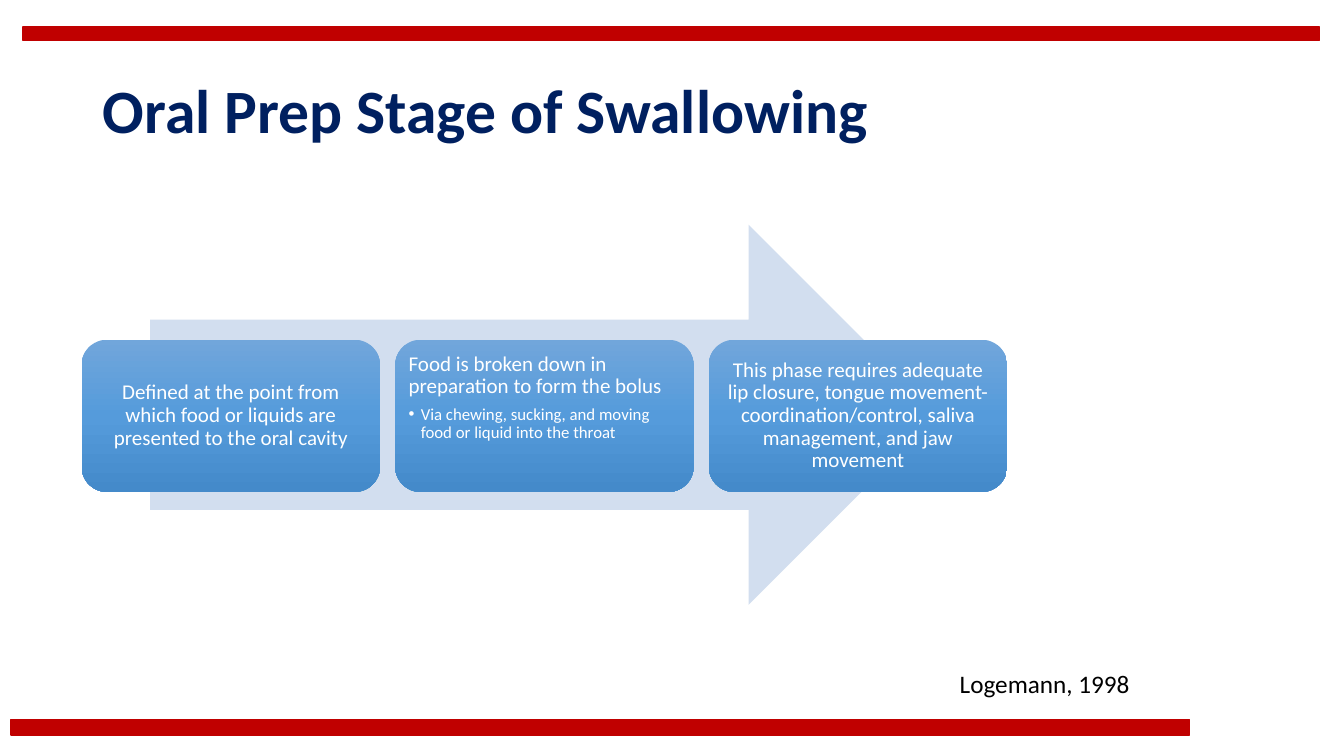
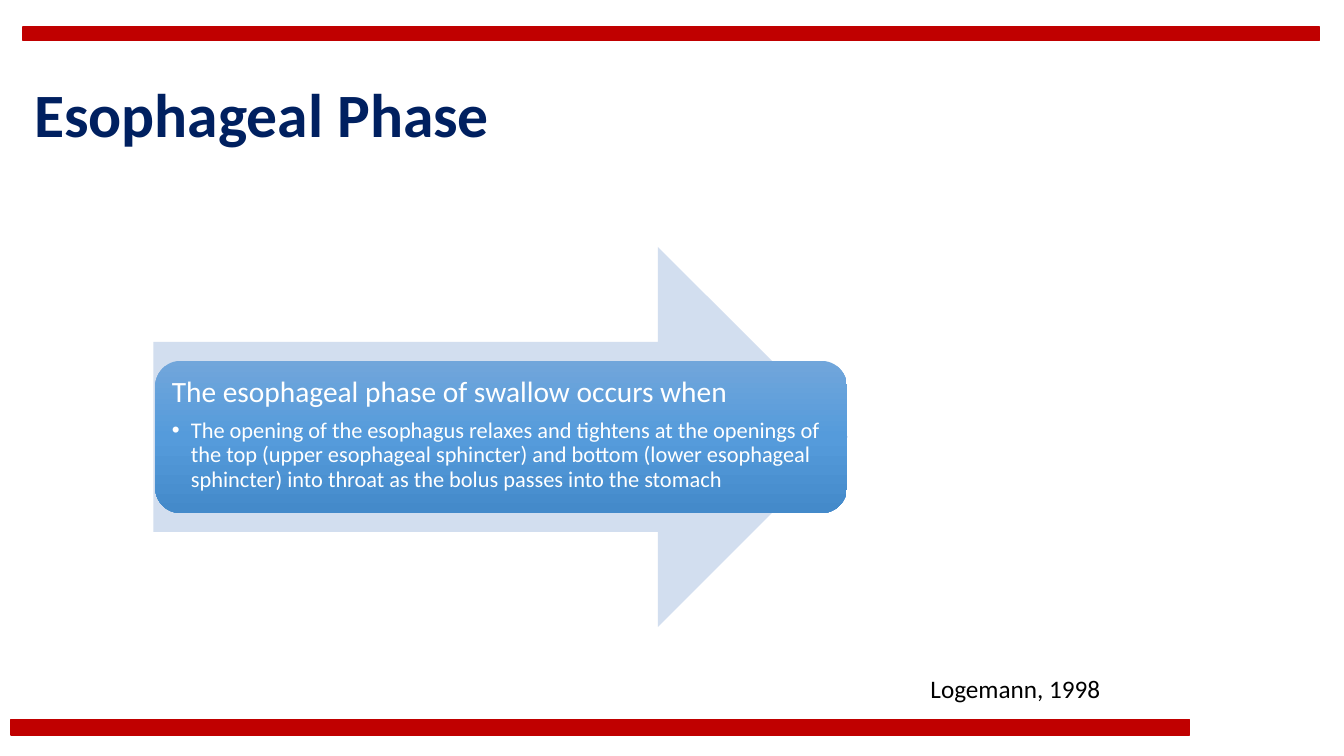
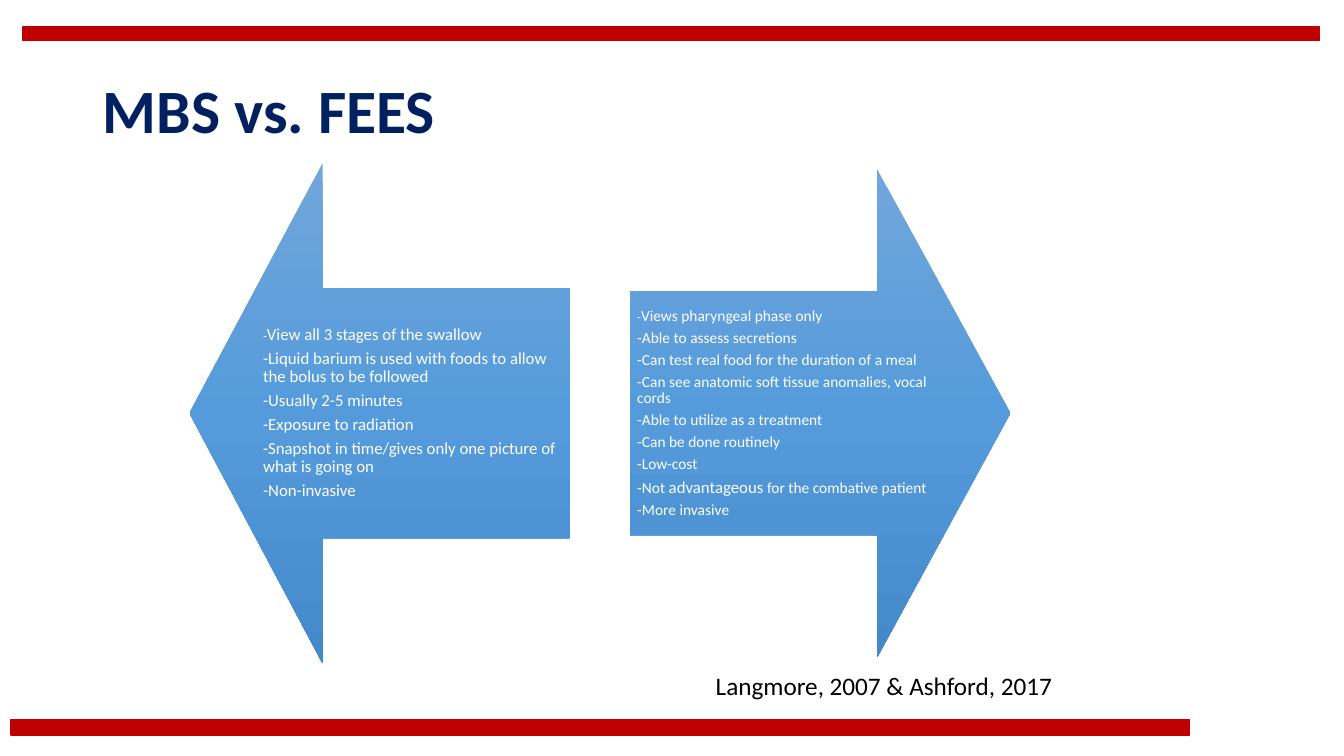
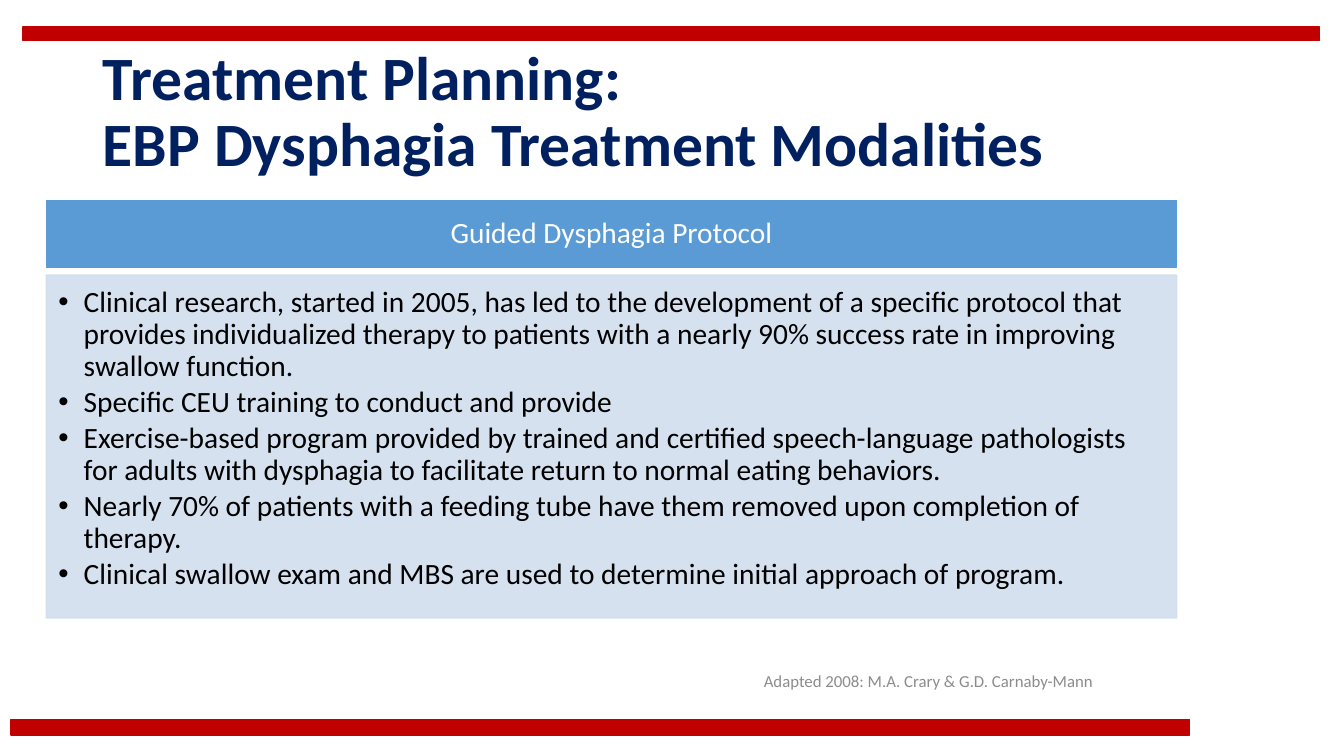
"""Build four slides on the stages, assessment and treatment of swallowing."""
from lxml.etree import SubElement
from pptx import Presentation
from pptx.dml.color import RGBColor
from pptx.enum.shapes import MSO_SHAPE
from pptx.enum.text import MSO_ANCHOR, MSO_AUTO_SIZE, PP_ALIGN
from pptx.oxml.ns import qn
from pptx.util import Inches, Pt

RED = RGBColor(0xC0, 0x00, 0x00)
NAVY = RGBColor(0x00, 0x20, 0x60)
BLUE = RGBColor(0x5B, 0x9B, 0xD5)
PALE = RGBColor(0xD2, 0xDE, 0xEF)
GREY = RGBColor(0x8C, 0x8C, 0x8C)
WHITE = RGBColor(0xFF, 0xFF, 0xFF)
BLACK = RGBColor(0x00, 0x00, 0x00)
GRADIENT = [(0, RGBColor(0x71, 0xA6, 0xDB)), (50, RGBColor(0x55, 0x9B, 0xDB)), (100, RGBColor(0x44, 0x8A, 0xCA))]
FONT = "Calibri"


def add_block(page, kind, place, fill=None, outlined=False):
    """Add a shape with a plain fill, or with the blue gradient when no fill is given."""
    block = page.shapes.add_shape(kind, *[Inches(length) for length in place])
    block.shadow.inherit = False
    if fill is None:
        block.fill.gradient()
        block.fill.gradient_angle = 270
        stops = block.element.spPr.find(".//" + qn("a:gsLst"))
        for stop in list(stops):
            stops.remove(stop)
        for percent, color in GRADIENT:
            stop = SubElement(stops, qn("a:gs"), pos=str(percent * 1000))
            SubElement(stop, qn("a:srgbClr"), val=str(color))
    else:
        block.fill.solid()
        block.fill.fore_color.rgb = fill
    if outlined:
        block.line.color.rgb = fill
        block.line.width = Pt(1)
    else:
        block.line.fill.background()
    return block


def write(box, items, color, align=PP_ALIGN.LEFT, anchor=MSO_ANCHOR.MIDDLE, insets=(0.1, 0.05, 0.1, 0.05), spacing=0.9):
    """Fill a box with (spans, size, bullet indent) items, where a span is text or (text, size)."""
    frame = box.text_frame
    frame.word_wrap = True
    frame.auto_size = MSO_AUTO_SIZE.NONE
    frame.vertical_anchor = anchor
    frame.margin_left, frame.margin_top, frame.margin_right, frame.margin_bottom = [Inches(inset) for inset in insets]
    for index, (spans, size, indent) in enumerate(items):
        para = frame.add_paragraph() if index else frame.paragraphs[0]
        para.alignment = align
        para.line_spacing = spacing
        para.space_after = Pt(round(size * (0.15 if indent else 0.35), 2)) if len(items) > 1 else Pt(0)
        if indent:
            properties = para._p.get_or_add_pPr()
            properties.set("marL", str(Inches(indent)))
            properties.set("indent", str(-Inches(indent)))
            SubElement(properties, qn("a:buFont"), typeface="Arial")
            SubElement(properties, qn("a:buChar"), char="•")
        para.font.name = FONT
        para.font.size = Pt(size)
        para.font.color.rgb = color
        if isinstance(spans, str):
            para.text = spans
            continue
        for text, span_size in spans:
            span = para.add_run()
            span.text = text
            span.font.size = Pt(span_size)


deck = Presentation()
deck.slide_width = Inches(13.33)
deck.slide_height = Inches(7.5)
layout = deck.slide_layouts[5]

headings = [
    ("Oral Prep Stage of Swallowing", 0.92, 0.4),
    ("Esophageal Phase", 0.24, 0.44),
    ("MBS vs. FEES", 0.92, 0.4),
    ("Treatment Planning:\vEBP Dysphagia Treatment Modalities", 0.92, 0.4),
]
pages = []
for heading, left, top in headings:
    page = deck.slides.add_slide(layout)
    title = page.shapes.title
    title.left, title.top = Inches(left), Inches(top)
    title.width, title.height = Inches(11.5), Inches(1.45)
    write(title, [(heading, 44, 0)], NAVY)
    title.text_frame.paragraphs[0].font.bold = True
    pages.append(page)
oral_page, esophageal_page, comparison_page, treatment_page = pages

for place in [(0.11, 7.14, 11.69, 0.15), (0.23, 0.27, 12.86, 0.13)]:
    band = add_block(oral_page, MSO_SHAPE.RECTANGLE, place, RED, outlined=True)
    layout.shapes.element.insert(2, band.element)

citations = [
    (oral_page, "Logemann, 1998", (9.42, 6.58, 2.41, 0.4), 18, BLACK, PP_ALIGN.LEFT),
    (esophageal_page, "Logemann, 1998", (9.13, 6.63, 2.41, 0.4), 18, BLACK, PP_ALIGN.LEFT),
    (comparison_page, "Langmore, 2007 & Ashford, 2017", (7, 6.6, 4.19, 0.4), 18, BLACK, PP_ALIGN.LEFT),
    (treatment_page, "Adapted 2008: M.A. Crary & G.D. Carnaby-Mann", (7.14, 6.55, 4.14, 0.4), 12, GREY, PP_ALIGN.CENTER),
]
for page, citation, place, size, color, align in citations:
    box = page.shapes.add_textbox(*[Inches(length) for length in place])
    write(box, [(citation, size, 0)], color, align, spacing=1.0)

add_block(oral_page, MSO_SHAPE.RIGHT_ARROW, (1.49, 2.23, 7.82, 3.77), PALE)
steps = [
    [("Defined at the point from which food or liquids are presented to the oral cavity", 15, 0)],
    [
        ("Food is broken down in preparation to form the bolus", 15, 0),
        ("Via chewing, sucking, and moving food or liquid into the throat", 12, 0.12),
    ],
    [("This phase requires adequate lip closure, tongue movement-coordination/control, saliva management, and jaw movement", 15, 0)],
]
for index, items in enumerate(steps):
    card = add_block(oral_page, MSO_SHAPE.ROUNDED_RECTANGLE, (0.81 + index * 3.11, 3.37, 2.96, 1.51))
    single = len(items) == 1
    align = PP_ALIGN.CENTER if single else PP_ALIGN.LEFT
    anchor = MSO_ANCHOR.MIDDLE if single else MSO_ANCHOR.TOP
    write(card, items, WHITE, align, anchor, (0.06,) * 4)

add_block(esophageal_page, MSO_SHAPE.RIGHT_ARROW, (1.52, 2.45, 6.89, 3.77), PALE)
card = add_block(esophageal_page, MSO_SHAPE.ROUNDED_RECTANGLE, (1.54, 3.58, 6.86, 1.51))
phase = [
    ("The esophageal phase of swallow occurs when", 21, 0),
    ("The opening of the esophagus relaxes and tightens at the openings of the top (upper esophageal sphincter) and bottom (lower esophageal sphincter) into throat as the bolus passes into the stomach", 16, 0.19),
]
write(card, phase, WHITE, anchor=MSO_ANCHOR.TOP, insets=(0.09,) * 4)

mbs_points = [
    [("-", 9), ("View all 3 stages of the swallow", 12)],
    "-Liquid barium is used with foods to allow the bolus to be followed",
    "-Usually 2-5 minutes",
    "-Exposure to radiation",
    "-Snapshot in time/gives only one picture of what is going on",
    "-Non-invasive",
]
fees_points = [
    [("-", 9), ("Views pharyngeal phase only", 11)],
    "-Able to assess secretions",
    "-Can test real food for the duration of a meal",
    "-Can see anatomic soft tissue anomalies, vocal cords",
    "-Able to utilize as a treatment",
    "-Can be done routinely",
    "-Low-cost",
    [("-Not ", 11), ("advantageous", 12), (" for the combative patient", 11)],
    "-More invasive",
]
sides = [
    (MSO_SHAPE.LEFT_ARROW, (1.88, 1.62, 3.77, 4.96), mbs_points, 12),
    (MSO_SHAPE.RIGHT_ARROW, (6.25, 1.68, 3.77, 4.84), fees_points, 11),
]
for kind, place, points, size in sides:
    arrow = add_block(comparison_page, kind, place)
    arrow.adjustments[1] = 0.35
    write(arrow, [(point, size, 0) for point in points], WHITE, insets=(0.07,) * 4)

header = add_block(treatment_page, MSO_SHAPE.RECTANGLE, (0.46, 1.99, 11.21, 0.66), BLUE, outlined=True)
write(header, [("Guided Dysphagia Protocol", 21, 0)], WHITE, PP_ALIGN.CENTER, insets=(0.16, 0.09, 0.16, 0.09))
panel = add_block(treatment_page, MSO_SHAPE.RECTANGLE, (0.46, 2.73, 11.21, 3.4), PALE, outlined=True)
for color in panel.element.spPr.iter(qn("a:srgbClr")):
    SubElement(color, qn("a:alpha"), val="90000")
protocol = [
    "Clinical research, started in 2005, has led to the development of a specific protocol that provides individualized therapy to patients with a nearly 90% success rate in improving swallow function.",
    "Specific CEU training to conduct and provide",
    "Exercise-based program provided by trained and certified speech-language pathologists for adults with dysphagia to facilitate return to normal eating behaviors.",
    "Nearly 70% of patients with a feeding tube have them removed upon completion of therapy.",
    "Clinical swallow exam and MBS are used to determine initial approach of program.",
]
write(panel, [(point, 21, 0.25) for point in protocol], BLACK, anchor=MSO_ANCHOR.TOP, insets=(0.12, 0.12, 0.16, 0.18))

deck.save("out.pptx")
